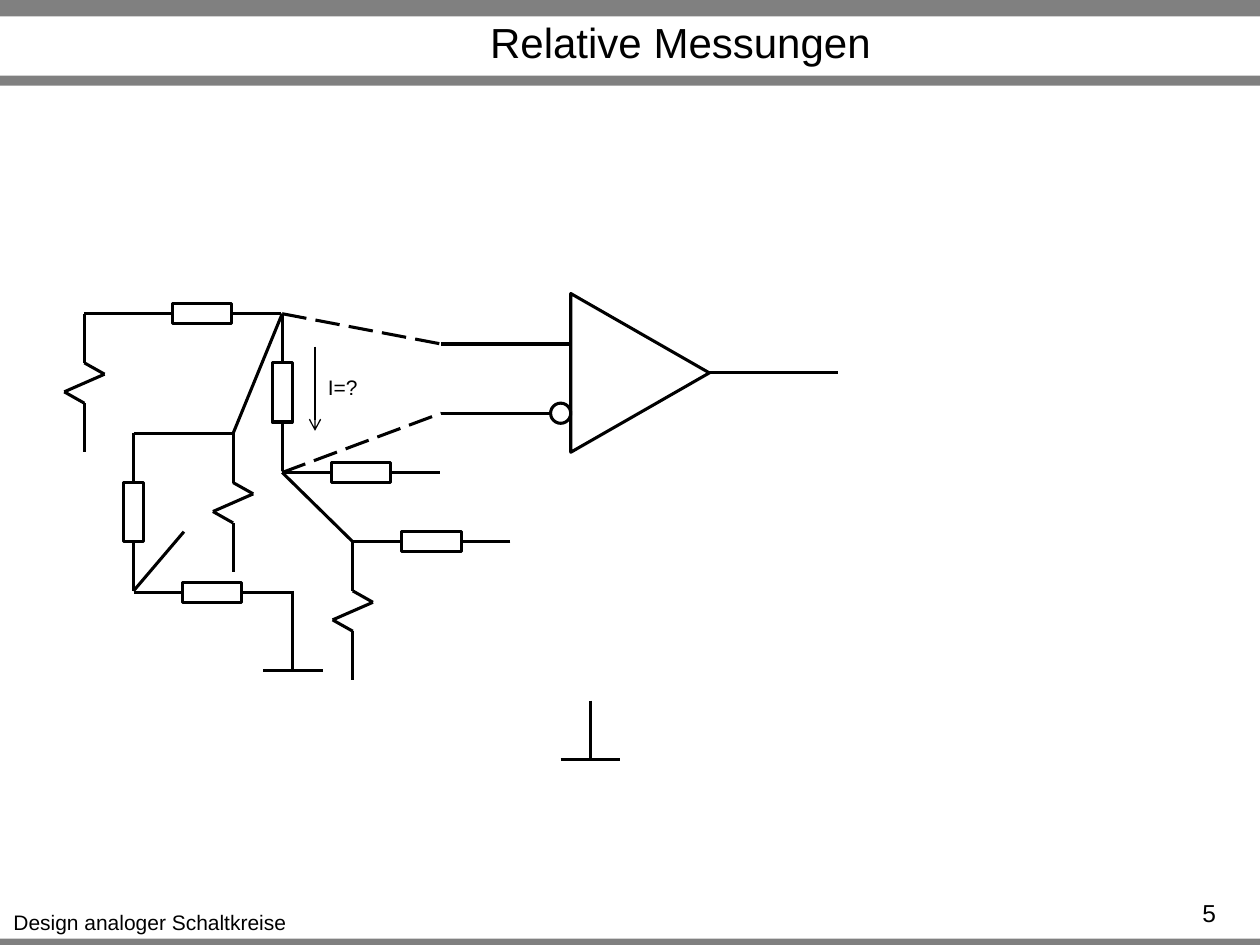
"""Build the slide on relative measurements with a circuit and an amplifier."""
from lxml import etree
from pptx import Presentation
from pptx.dml.color import RGBColor
from pptx.enum.dml import MSO_LINE
from pptx.enum.shapes import MSO_CONNECTOR, MSO_SHAPE
from pptx.enum.text import MSO_ANCHOR, PP_ALIGN
from pptx.oxml.ns import qn
from pptx.util import Inches, Pt

BLACK = RGBColor(0, 0, 0)
WHITE = RGBColor(255, 255, 255)
GRAY = RGBColor(128, 128, 128)
RECT, OVAL = MSO_SHAPE.RECTANGLE, MSO_SHAPE.OVAL
TRIANGLE = MSO_SHAPE.ISOSCELES_TRIANGLE
STRAIGHT, DASH = MSO_CONNECTOR.STRAIGHT, MSO_LINE.LONG_DASH
CENTER, RIGHT = PP_ALIGN.CENTER, PP_ALIGN.RIGHT
TOP, MIDDLE = MSO_ANCHOR.TOP, MSO_ANCHOR.MIDDLE
LEAD, BODY, THICK = 0.39, 0.47, 0.16
LINE = 1.75

prs = Presentation()
prs.slide_width, prs.slide_height = Inches(10), Inches(7.5)
slide = prs.slides.add_slide(prs.slide_layouts[6])
shapes = slide.shapes


def write(text, box, size=12, align=CENTER, anchor=TOP, wrap=False):
    frame = shapes.add_textbox(*map(Inches, box)).text_frame
    frame.word_wrap = wrap
    frame.vertical_anchor = anchor
    para = frame.paragraphs[0]
    para.text = text
    para.alignment = align
    para.font.name, para.font.size = "Arial", Pt(size)
    para.font.color.rgb = BLACK


def wire(x1, y1, x2, y2, width=LINE, dash=None):
    line = shapes.add_connector(STRAIGHT, *map(Inches, (x1, y1, x2, y2)))
    line.line.color.rgb = BLACK
    line.line.width = Pt(width)
    if dash:
        line.line.dash_style = dash
    etree.SubElement(line._element.spPr, qn("a:effectLst"))
    return line


for top, high in ((7.45, 0.08), (0, 0.13), (0.6, 0.08)):
    bar = shapes.add_shape(RECT, 0, Inches(top), Inches(10), Inches(high))
    bar.shadow.inherit = False
    bar.fill.solid()
    bar.fill.fore_color.rgb = GRAY
    bar.line.fill.background()

write("Design analoger Schaltkreise", (0, 7.17, 2.38, 0.3))
write("5", (5.92, 7.08, 3.83, 0.42), size=14, align=RIGHT, wrap=True)
write("Relative Messungen", (1.3, 0.14, 8.2, 0.38), size=24, anchor=MIDDLE, wrap=True)

inputs = [(4.53, 2.73, 3.5, 2.73), (4.53, 3.28, 3.5, 3.28)]
output = [(6.65, 2.96, 5.63, 2.96)]
links = [
    (2.24, 2.49, 1.85, 3.44), (1.06, 3.44, 1.85, 3.44),
    (1.06, 4.69, 1.46, 4.22), (0.98, 2.49, 0.67, 2.49),
    (2.24, 3.75, 2.8, 4.3),
]
grounds = [
    (2.32, 4.69, 2.32, 5.32), (2.09, 5.32, 2.56, 5.32),
    (4.69, 5.56, 4.69, 6.03), (4.45, 6.03, 4.92, 6.03),
]
for ends in inputs + output + links + grounds:
    wire(*ends)
for ends in ((2.24, 2.49, 3.5, 2.73), (2.24, 3.75, 3.5, 3.28)):
    wire(*ends, dash=DASH)

zigzag = [(0, 0), (0, 0.39), (0.16, 0.48), (-0.16, 0.62), (0, 0.71), (0, 1.1)]
for x, y in ((1.85, 3.44), (0.67, 2.49), (2.8, 4.3)):
    for (dx1, dy1), (dx2, dy2) in zip(zigzag, zigzag[1:]):
        wire(x + dx1, y + dy1, x + dx2, y + dy2)

resistors = [
    (2.24, 2.49, False), (1.06, 3.44, False), (0.98, 2.49, True),
    (1.06, 4.7, True), (2.8, 4.3, True), (2.24, 3.75, True),
]
for x, y, flat in resistors:
    full = 2 * LEAD + BODY
    if flat:
        box = (x + LEAD, y - THICK / 2, BODY, THICK)
        end, sides = (x + full, y), (1, 3)
    else:
        box = (x - THICK / 2, y + LEAD, THICK, BODY)
        end, sides = (x, y + full), (0, 2)
    body = shapes.add_shape(RECT, *map(Inches, box))
    body.shadow.inherit = False
    body.fill.background()
    body.line.color.rgb = BLACK
    body.line.width = Pt(LINE)
    for tip, side in zip(((x, y), end), sides):
        wire(*tip, *tip).end_connect(body, side)

for kind, box, turn in (
    (TRIANGLE, (4.45, 2.41, 1.26, 1.1), 90),
    (OVAL, (4.37, 3.2, 0.16, 0.16), 0),
):
    part = shapes.add_shape(kind, *map(Inches, box))
    part.rotation = turn
    part.shadow.inherit = False
    part.line.color.rgb = BLACK
    part.line.width = Pt(LINE)
    if kind == OVAL:
        part.fill.solid()
        part.fill.fore_color.rgb = WHITE
    else:
        part.fill.background()

arrow = wire(2.5, 2.75, 2.5, 3.42, width=0.75)
etree.SubElement(arrow.line._get_or_add_ln(), qn("a:tailEnd"), type="arrow")
write("I=?", (2.5, 2.92, 0.44, 0.3))

prs.save("out.pptx")
